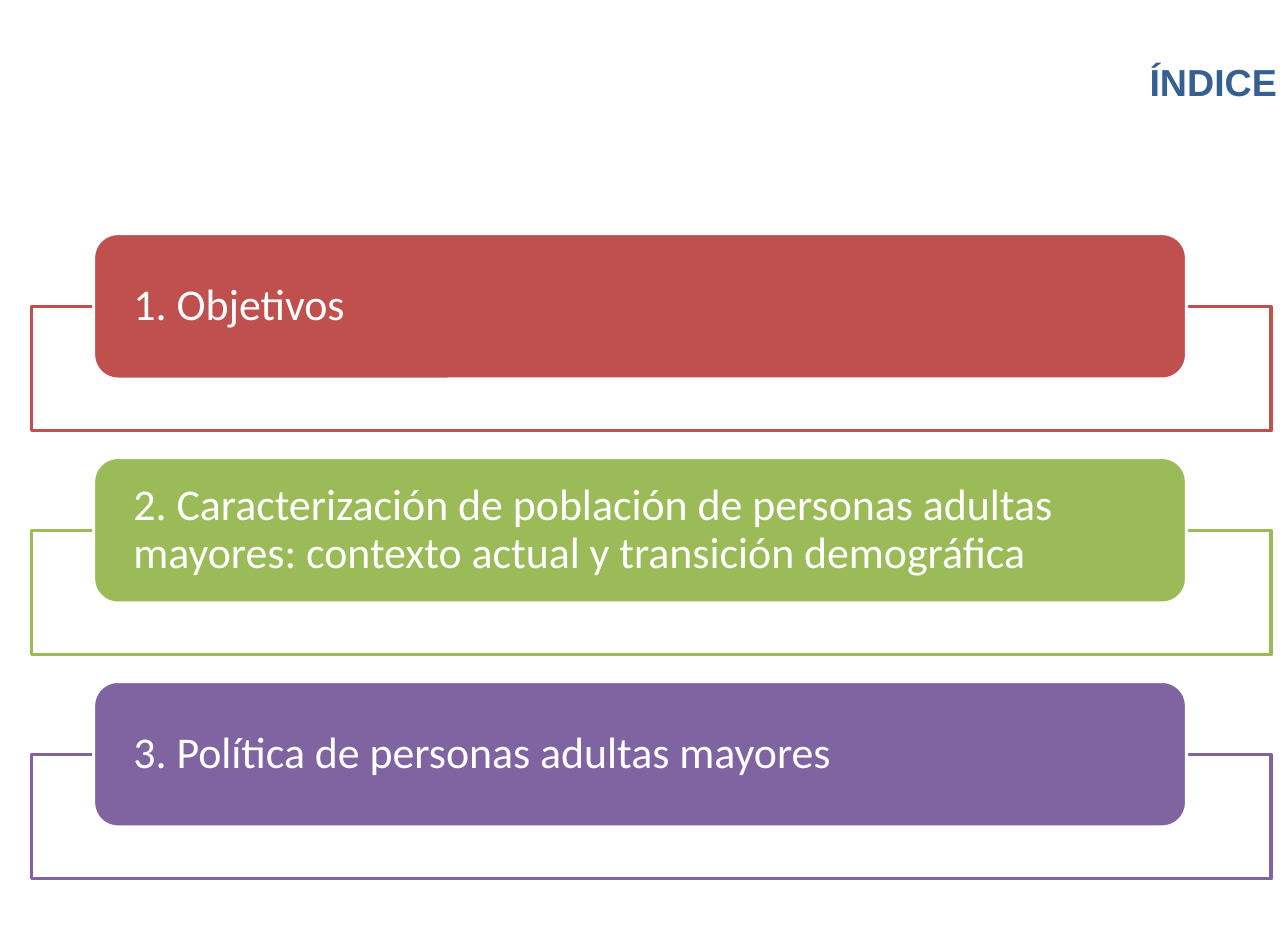
from pptx import Presentation
from pptx.dml.color import RGBColor
from pptx.enum import shapes, text
from pptx.util import Inches, Pt

# Content
TITLE = "ÍNDICE"
WHITE = RGBColor(0xFF, 0xFF, 0xFF)
BLUE = RGBColor(0x37, 0x60, 0x92)
RED = RGBColor(0xC0, 0x50, 0x4D)
GREEN = RGBColor(0x9B, 0xBB, 0x59)
PURPLE = RGBColor(0x80, 0x64, 0xA2)
SECTIONS = [
    ("1. Objetivos", RED),
    ("2. Caracterización de población de personas adultas mayores: "
     "contexto actual y transición demográfica", GREEN),
    ("3. Política de personas adultas mayores", PURPLE),
]

# Layout, in inches
FIRST_TOP, PITCH = 2.07, 1.985
FRAME_DROP = 0.65  # frame top below its banner top

TITLE_FONT = {"name": "Arial", "size": Pt(24), "bold": True}
SECTION_FONT = {"name": "Calibri", "size": Pt(28)}


def write(frame, words, font, color, align):
    frame.word_wrap = True
    paragraph = frame.paragraphs[0]
    paragraph.alignment = align
    run = paragraph.add_run()
    run.text = words
    for key, value in font.items():
        setattr(run.font, key, value)
    run.font.color.rgb = color
    return paragraph


def add_box(slide, kind, left, top, width, height, fill, line):
    box = slide.shapes.add_shape(
        kind, Inches(left), Inches(top), Inches(width), Inches(height))
    box.shadow.inherit = False
    box.fill.solid()
    box.fill.fore_color.rgb = fill
    box.line.color.rgb = line
    box.line.width = Pt(2)
    return box


def main():
    deck = Presentation()
    deck.slide_width, deck.slide_height = Inches(11.42), Inches(8.27)
    slide = deck.slides.add_slide(deck.slide_layouts[6])

    # Sections: an outlined frame with a banner over its top edge
    for index, (words, color) in enumerate(SECTIONS):
        top = FIRST_TOP + index * PITCH
        add_box(slide, shapes.MSO_SHAPE.RECTANGLE,
                0.28, top + FRAME_DROP, 10.99, 1.1, WHITE, color)
        banner = add_box(slide, shapes.MSO_SHAPE.ROUNDED_RECTANGLE,
                         0.83, top, 9.69, 1.29, color, WHITE)
        frame = banner.text_frame
        frame.margin_left = frame.margin_right = Inches(0.29)
        frame.margin_top = frame.margin_bottom = 0
        frame.vertical_anchor = text.MSO_ANCHOR.MIDDLE
        label = write(frame, words, SECTION_FONT, WHITE, text.PP_ALIGN.LEFT)
        label.line_spacing = 0.9

    # Title
    heading = slide.shapes.add_textbox(
        Inches(4.6), Inches(0.47), Inches(6.82), Inches(0.5))
    write(heading.text_frame, TITLE, TITLE_FONT, BLUE, text.PP_ALIGN.RIGHT)
    heading.text_frame.auto_size = text.MSO_AUTO_SIZE.SHAPE_TO_FIT_TEXT

    deck.save("out.pptx")


if __name__ == "__main__":
    main()
